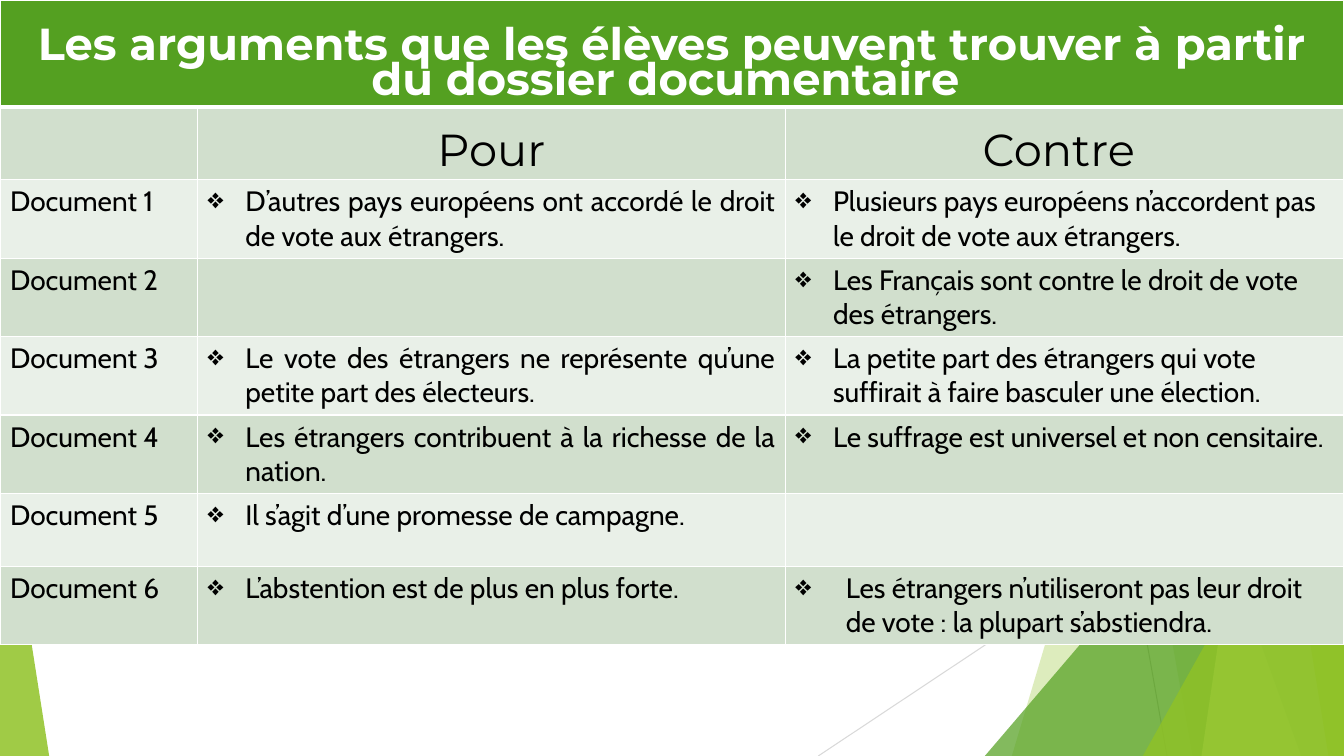
from lxml import etree
from pptx import Presentation
from pptx import util as u
from pptx.dml.color import RGBColor
from pptx.enum import shapes, text
from pptx.oxml import ns

Cm, Pt = u.Cm, u.Pt
WIDTH, HEIGHT = 33.87, 19.05
COLORS = {
    "white": "FFFFFF", "black": "000000", "grey": "BFBFBF", "pale grey": "D9D9D9",
    "lime": "90C226", "light lime": "C0E474", "green": "54A021", "dark green": "3F7819",
    "band": "D1DFCD", "light band": "E9F0E8",
}


def add_xml(parent, tag, **attributes):
    child = etree.SubElement(parent, ns.qn(tag))
    for key, value in attributes.items():
        child.set(key, str(value))
    return child


def write(para, words, font, size, color, bold=False):
    span = para.add_run()
    span.text = words
    span.font.name, span.font.size, span.font.bold = font, Pt(size), bold
    span.font.color.rgb = RGBColor.from_string(COLORS[color])


deck = Presentation()
deck.slide_width, deck.slide_height = Cm(WIDTH), Cm(HEIGHT)
page = deck.slides.add_slide(deck.slide_layouts[6])

# Thin lines behind the facets
for x1, y1, x2, y2, color in [
    (26.04, 0, 29.41, HEIGHT, "grey"),
    (WIDTH, 10.24, 20.62, HEIGHT, "pale grey"),
]:
    line = page.shapes.add_connector(
        shapes.MSO_CONNECTOR.STRAIGHT, Cm(x1), Cm(y1), Cm(x2), Cm(y2))
    line.line.color.rgb = RGBColor.from_string(COLORS[color])
    line.line.width = Pt(0.75)
    add_xml(line._element.spPr, "a:effectLst")

# Facets: a band reaches the right edge (top x, bottom x);
# a triangle stands on the bottom edge (left, width, height, apex)
facets = [
    ((31.19, 25.5), "lime", 30),
    ((26.67, 30.05), "lime", 20),
    ((24.82, 9.05, 10.59, 1), "green", 72),
    ((25.93, 32.79), "dark green", 70),
    ((33.1, 30.28), "light lime", 70),
    ((30.38, 33.48), "lime", 65),
    ((28.8, 5.07, 9.07, 1), "lime", 80),
    ((0, 1.24, 7.9, 0), "lime", 85),
]
for outline, color, opacity in facets:
    if len(outline) == 2:
        top_x, bottom_x = outline
        builder = page.shapes.build_freeform(Cm(top_x), Cm(-0.02))
        builder.add_line_segments([
            (Cm(WIDTH), Cm(-0.02)), (Cm(WIDTH), Cm(HEIGHT)), (Cm(bottom_x), Cm(HEIGHT))])
        facet = builder.convert_to_shape()
    else:
        left, width, height, apex = outline
        facet = page.shapes.add_shape(
            shapes.MSO_SHAPE.ISOSCELES_TRIANGLE,
            Cm(left), Cm(HEIGHT - height), Cm(width), Cm(height))
        facet.adjustments[0] = apex
    facet.shadow.inherit = False
    facet.line.fill.background()
    facet.fill.solid()
    facet.fill.fore_color.rgb = RGBColor.from_string(COLORS[color])
    tint = facet._element.spPr.find(ns.qn("a:solidFill"))[0]
    add_xml(tint, "a:alpha", val=opacity * 1000)

# Table of arguments
title = "Les arguments que les élèves peuvent trouver à partir du dossier documentaire "
rows = [
    (title, "", ""),
    ("", "Pour", "Contre "),
    ("Document 1", "D’autres pays européens ont accordé le droit de vote aux étrangers.",
     "Plusieurs pays européens n’accordent pas le droit de vote aux étrangers."),
    ("Document 2", "", "Les Français sont contre le droit de vote des étrangers."),
    ("Document 3", "Le vote des étrangers ne représente qu’une petite part des électeurs.",
     "La petite part des étrangers qui vote suffirait à faire basculer une élection."),
    ("Document 4", "Les étrangers contribuent à la richesse de la nation.",
     "Le suffrage est universel et non censitaire."),
    ("Document 5", "Il s’agit d’une promesse de campagne.", ""),
    ("Document 6", "L’abstention est de plus en plus forte.",
     "Les étrangers n’utiliseront pas leur droit de vote : la plupart s’abstiendra."),
]
column_widths = [4.98, 14.81, 14.08]
row_heights = [2.69, 1.84, 1.97, 1.97, 1.97, 1.97, 1.84, 1.97]

table = page.shapes.add_table(
    len(rows), 3, 0, 0, Cm(WIDTH), Cm(sum(row_heights))).table
table.first_row = table.horz_banding = False
for column, width in zip(table.columns, column_widths):
    column.width = Cm(width)
for row, height in zip(table.rows, row_heights):
    row.height = Cm(height)
table.cell(0, 0).merge(table.cell(0, 2))

for r, row in enumerate(rows):
    band = "green" if r == 0 else "band" if r % 2 or r == 1 else "light band"
    for c, words in enumerate(row):
        cell = table.cell(r, c)
        properties = cell._tc.get_or_add_tcPr()
        for side in "LRTB":
            thick = (r == 0 and side == "B") or (r == 1 and side == "T")
            border = add_xml(properties, f"a:ln{side}", w=Pt(3 if thick else 1))
            add_xml(add_xml(border, "a:solidFill"), "a:srgbClr", val=COLORS["white"])
        cell.fill.solid()
        cell.fill.fore_color.rgb = RGBColor.from_string(COLORS[band])
        if not words:
            continue

        para = cell.text_frame.paragraphs[0]
        if r < 2:
            cell.margin_left = cell.margin_right = Cm(0.18)
            cell.margin_top, cell.margin_bottom = Cm(0.9), 0
            para.alignment = text.PP_ALIGN.CENTER
            para.line_spacing = Pt(25.4)
            write(para, words, "Montserrat", 32, "black" if r else "white", bold=r == 0)
            continue

        para.alignment = text.PP_ALIGN.LEFT if c == 2 else text.PP_ALIGN.JUSTIFY
        if c:
            indent = Cm(1.27 if (r, c) == (7, 2) else 0.95)
            layout = para._p.get_or_add_pPr()
            layout.set("marL", str(indent))
            layout.set("indent", str(-indent))
            add_xml(layout, "a:buChar", char="❖")
        write(para, words, "Cabin", 20, "black")

deck.save("out.pptx")
